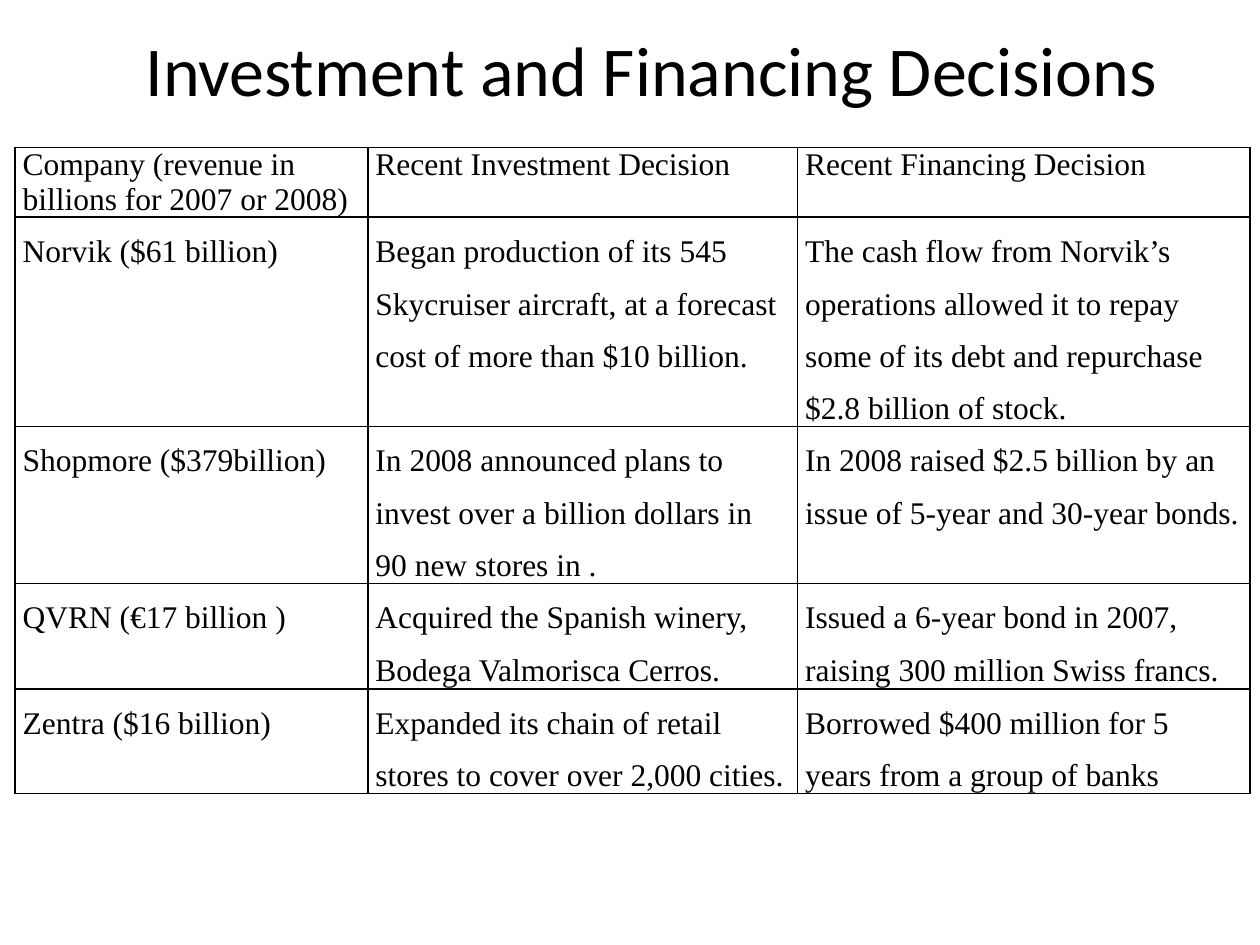
import pptx
import pptx.dml.color
import pptx.enum.text
import pptx.oxml
import pptx.oxml.ns
import pptx.util
from pptx.util import Inches

THEME = {
    "ink": "000000",
    "title_font": "Calibri",
    "title_size": 40,
    "table_font": "Times New Roman",
    "table_size": 18,
    "border_width": 1,
}


def format_text(paragraph, font_name, size):
    font = paragraph.font
    for name, value in {"name": font_name, "size": pptx.util.Pt(size), "bold": False}.items():
        setattr(font, name, value)
    font.color.rgb = pptx.dml.color.RGBColor.from_string(THEME["ink"])


def add_borders(cell):
    properties = cell._tc.get_or_add_tcPr()
    width = pptx.util.Pt(THEME["border_width"])
    for position, side in enumerate(("lnL", "lnR", "lnT", "lnB")):
        line = pptx.oxml.parse_xml(
            f'<a:{side} {pptx.oxml.ns.nsdecls("a")} w="{width}"><a:solidFill>'
            f'<a:srgbClr val="{THEME["ink"]}"/></a:solidFill></a:{side}>'
        )
        properties.insert(position, line)


presentation = pptx.Presentation()
presentation.slide_width = Inches(10)
presentation.slide_height = Inches(7.5)
slide = presentation.slides.add_slide(presentation.slide_layouts[5])

# Title
title = slide.shapes.title
for name, value in {"left": 0.67, "top": 0, "width": 9, "height": 1.08}.items():
    setattr(title, name, Inches(value))
title.text_frame.text = "Investment and Financing Decisions"
title.text_frame.vertical_anchor = pptx.enum.text.MSO_ANCHOR.MIDDLE
title_paragraph = title.text_frame.paragraphs[0]
title_paragraph.alignment = pptx.enum.text.PP_ALIGN.CENTER
format_text(title_paragraph, THEME["title_font"], THEME["title_size"])

# Decisions by company
decisions = [
    ("Company (revenue in billions for 2007 or 2008)",
     "Recent Investment Decision",
     "Recent Financing Decision"),
    ("Norvik ($61 billion)",
     "Began production of its 545 Skycruiser aircraft, at a forecast cost of more than $10 billion.",
     "The cash flow from Norvik’s operations allowed it to repay some of its debt "
     "and repurchase $2.8 billion of stock."),
    ("Shopmore ($379billion)",
     "In 2008 announced plans to invest over a billion dollars in 90 new stores in .",
     "In 2008 raised $2.5 billion by an issue of 5-year and 30-year bonds."),
    ("QVRN (€17 billion )",
     "Acquired the Spanish winery, Bodega Valmorisca Cerros.",
     "Issued a 6-year bond in 2007, raising 300 million Swiss francs."),
    ("Zentra ($16 billion)",
     "Expanded its chain of retail stores to cover over 2,000 cities.",
     "Borrowed $400 million for 5 years from a group of banks"),
]
column_widths = [2.8, 3.41, 3.59]
row_heights = [0.55, 1.24, 0.84, 0.84, 0.83]
cell_margins = {"margin_left": 0.06, "margin_right": 0.06, "margin_top": 0, "margin_bottom": 0}

table = slide.shapes.add_table(
    len(decisions), len(column_widths), Inches(0.12), Inches(1.17),
    Inches(sum(column_widths)), Inches(sum(row_heights)),
).table
table.horz_banding = False
table.first_row = False
for column, width in zip(table.columns, column_widths):
    column.width = Inches(width)
for row, height in zip(table.rows, row_heights):
    row.height = Inches(height)

# Cell text, margins and borders
for row_index, texts in enumerate(decisions):
    for column_index, text in enumerate(texts):
        cell = table.cell(row_index, column_index)
        cell.text = text
        for name, value in cell_margins.items():
            setattr(cell, name, Inches(value))
        cell.fill.background()
        add_borders(cell)
        paragraph = cell.text_frame.paragraphs[0]
        format_text(paragraph, THEME["table_font"], THEME["table_size"])
        if row_index > 0:
            paragraph.line_spacing = 1.5

presentation.save("out.pptx")
